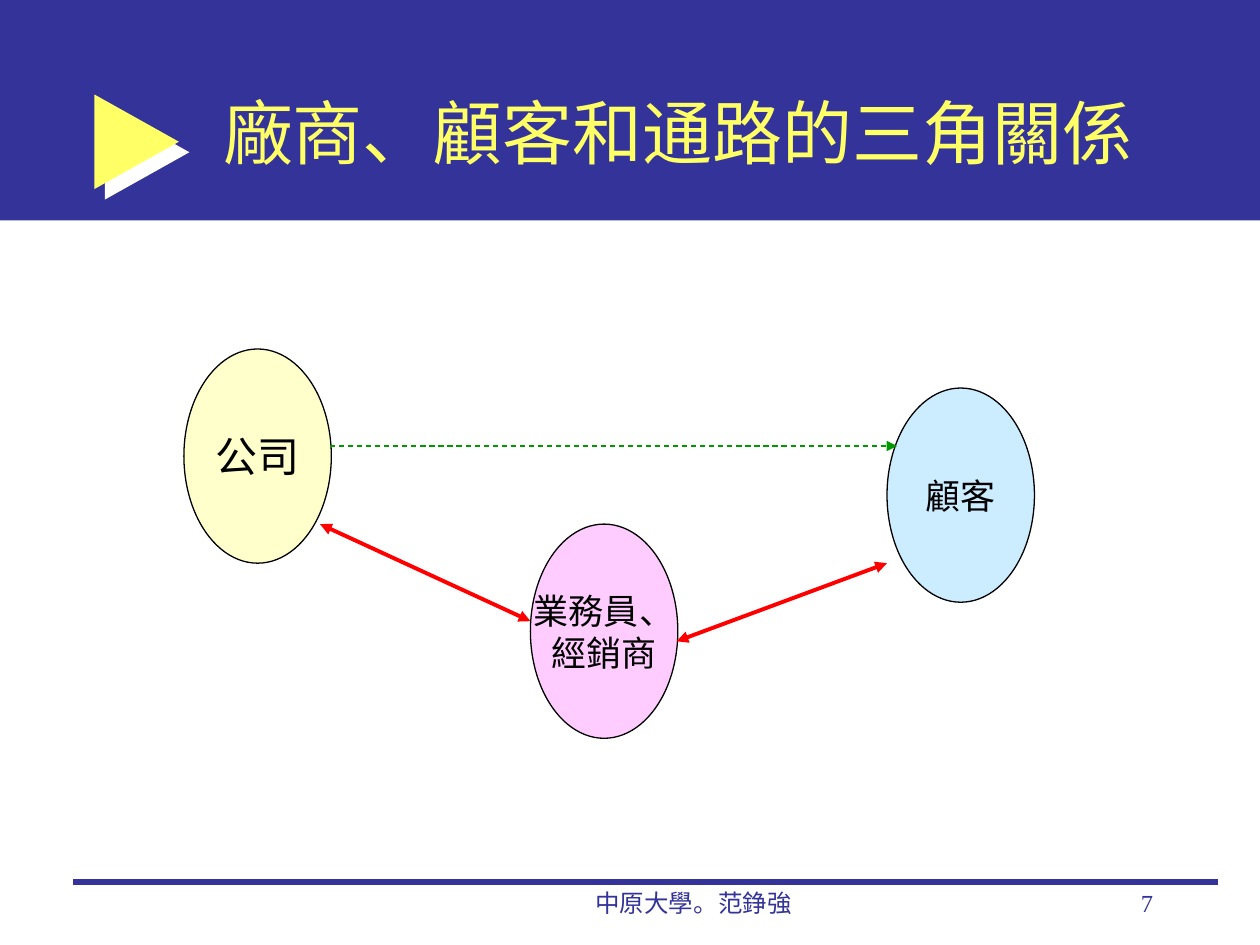
from dataclasses import dataclass

from lxml import etree
from pptx import Presentation
from pptx.dml.color import RGBColor
from pptx.enum import dml, shapes, text
from pptx.oxml import ns
from pptx.util import Inches, Pt


@dataclass(frozen=True)
class Theme:
    navy: str = "333399"
    yellow: str = "FFFF66"
    white: str = "FFFFFF"
    black: str = "000000"
    cream: str = "FFFFCC"
    pink: str = "FFCCFF"
    sky: str = "CCECFF"
    red: str = "FF0000"
    green: str = "009900"
    heading_font: str = "Arial"
    body_font: str = "Times New Roman"
    heading: int = 40
    large: int = 24
    medium: int = 20
    small: int = 14


def rgb(value):
    return RGBColor.from_string(value)


def write(frame, content, *, font, size, color, align, anchor, wrap=True):
    frame.word_wrap = wrap
    frame.vertical_anchor = anchor
    frame.text = content
    for paragraph in frame.paragraphs:
        paragraph.alignment = align
        paragraph.font.name = font
        paragraph.font.size = Pt(size)
        paragraph.font.color.rgb = rgb(color)


class Canvas:
    def __init__(self, slide, theme):
        self.slide = slide
        self.theme = theme

    def shape(self, kind, box, fill, line=None):
        item = self.slide.shapes.add_shape(kind, *map(Inches, box))
        item.shadow.inherit = False
        item.fill.solid()
        item.fill.fore_color.rgb = rgb(fill)
        if line:
            item.line.color.rgb = rgb(line)
            item.line.width = Pt(0.75)
        else:
            item.line.fill.background()
        return item

    def marker(self, box):
        arrow = self.shape(shapes.MSO_SHAPE.RIGHT_ARROW, box, self.theme.yellow)
        arrow.adjustments[0] = 0.38
        arrow.adjustments[1] = 1
        effects = arrow.element.spPr.find(ns.qn("a:effectLst"))
        shadow = etree.SubElement(effects, ns.qn("a:outerShdw"), dist=str(Pt(8.5)),
                                  dir="2700000", algn="ctr", rotWithShape="0")
        etree.SubElement(shadow, ns.qn("a:srgbClr"), val=self.theme.white)

    def title(self, content, box):
        heading = self.slide.shapes.title
        heading.left, heading.top, heading.width, heading.height = map(Inches, box)
        write(heading.text_frame, content, font=self.theme.heading_font,
              size=self.theme.heading, color=self.theme.yellow,
              align=text.PP_ALIGN.LEFT, anchor=text.MSO_ANCHOR.MIDDLE)
        heading.element.getparent().append(heading.element)

    def label(self, content, box, align):
        note = self.slide.shapes.add_textbox(*map(Inches, box))
        write(note.text_frame, content, font=self.theme.body_font,
              size=self.theme.small, color=self.theme.navy,
              align=align, anchor=text.MSO_ANCHOR.TOP)

    def party(self, content, left, top, fill, size):
        oval = self.shape(shapes.MSO_SHAPE.OVAL, (left, top, 1.17, 1.7), fill,
                          self.theme.black)
        write(oval.text_frame, content, font=self.theme.body_font, size=size,
              color=self.theme.black, align=text.PP_ALIGN.CENTER,
              anchor=text.MSO_ANCHOR.MIDDLE, wrap=False)

    def line(self, start, end, color, width, arrows=(), dashed=False):
        link = self.slide.shapes.add_connector(
            shapes.MSO_CONNECTOR.STRAIGHT, *map(Inches, start + end))
        link.line.color.rgb = rgb(color)
        link.line.width = Pt(width)
        if dashed:
            link.line.dash_style = dml.MSO_LINE.DASH
        stroke = link.line._get_or_add_ln()
        for side in arrows:
            etree.SubElement(stroke, ns.qn(f"a:{side}"), type="triangle")
        etree.SubElement(link.element.spPr, ns.qn("a:effectLst"))


def main():
    deck = Presentation()
    deck.slide_width, deck.slide_height = Inches(10), Inches(7.5)
    theme = Theme()
    canvas = Canvas(deck.slides.add_slide(deck.slide_layouts[5]), theme)

    canvas.shape(shapes.MSO_SHAPE.RECTANGLE, (0, 0, 10, 1.75), theme.navy)
    canvas.marker((0.75, 0.75, 0.67, 0.75))
    canvas.title("廠商、顧客和通路的三角關係", (1.67, 0.42, 7.58, 1.25))

    canvas.line((0.58, 7), (9.67, 7), theme.navy, 3)
    canvas.label("中原大學。范錚強", (3.92, 7, 3.17, 0.5), text.PP_ALIGN.CENTER)
    canvas.label("7", (7.17, 7, 2.08, 0.5), text.PP_ALIGN.RIGHT)

    canvas.party("公司", 1.46, 2.77, theme.cream, theme.large)
    canvas.party("業務員、\n經銷商", 4.21, 4.16, theme.pink, theme.medium)
    canvas.party("顧客", 7.04, 3.08, theme.sky, theme.medium)

    both_ends = ("headEnd", "tailEnd")
    canvas.line((2.54, 4.16), (4.21, 4.93), theme.red, 2.25, both_ends)
    canvas.line((5.37, 5.09), (7.04, 4.47), theme.red, 2.25, both_ends)
    canvas.line((2.62, 3.54), (7.12, 3.54), theme.green, 0.75, ("tailEnd",), dashed=True)

    deck.save("out.pptx")


if __name__ == "__main__":
    main()
